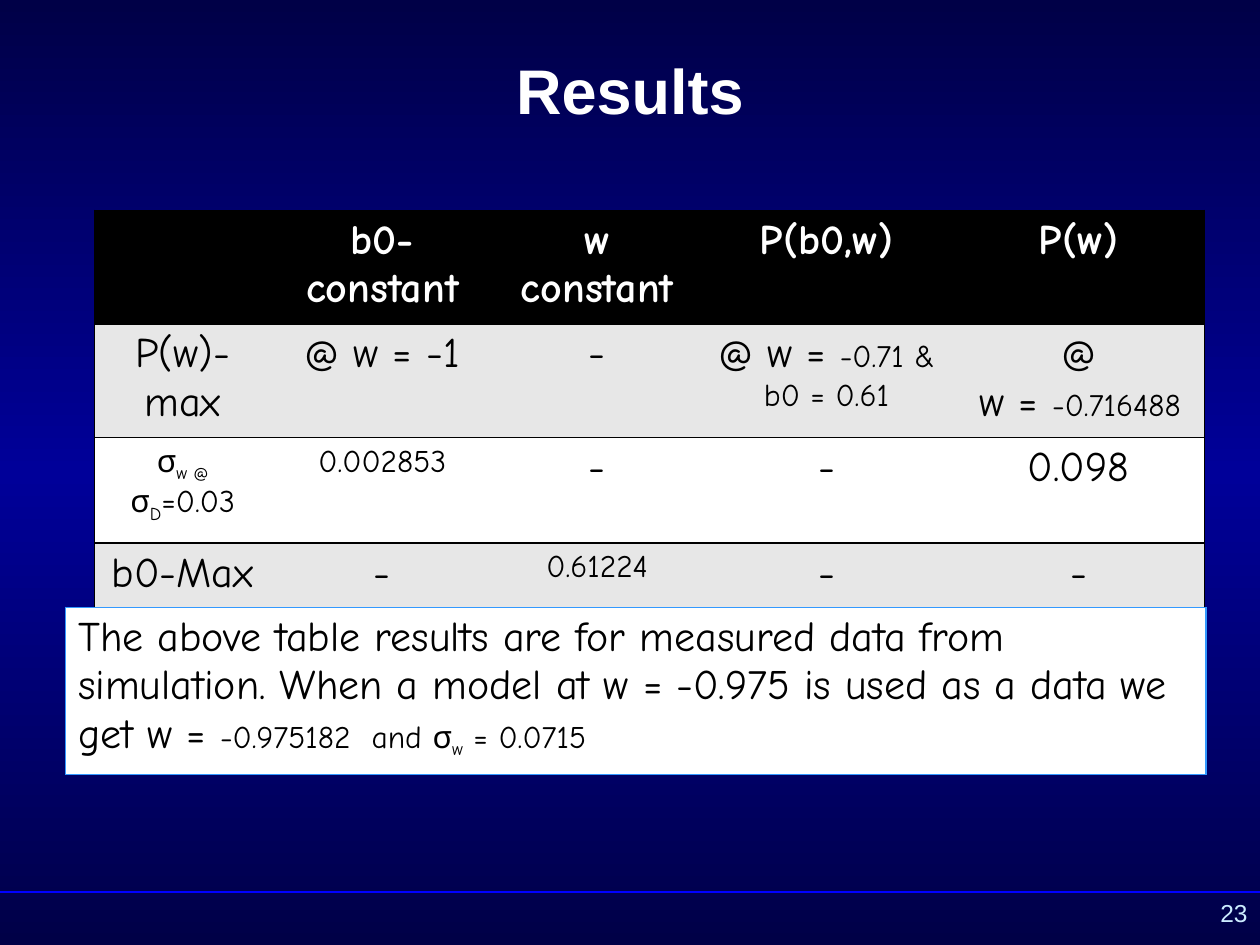
from copy import deepcopy
from typing import NamedTuple

from lxml import etree
from pptx import Presentation
from pptx import util as u
from pptx.dml.color import RGBColor
from pptx.enum import shapes, text
from pptx.oxml.ns import qn

BLACK = RGBColor(0x00, 0x00, 0x00)
WHITE = RGBColor(0xFF, 0xFF, 0xFF)
BAND_GREY = RGBColor(0xE7, 0xE7, 0xE7)
NAVY = RGBColor(0x00, 0x00, 0x47)
MID_BLUE = RGBColor(0x00, 0x00, 0x99)
RULE_BLUE = RGBColor(0x00, 0x00, 0xFF)
NOTE_BLUE = RGBColor(0x33, 0x99, 0xFF)
PALE_BLUE = RGBColor(0xCC, 0xEC, 0xFF)

HAND, SANS = "Comic Neue", "Arial"
WIDTH, HEIGHT = 10, 7.5
FOOTER_TOP = 7.08
LARGE, SMALL = 24, 18


class Run(NamedTuple):
    words: str
    size: int = LARGE
    color: RGBColor = BLACK
    bold: bool = False
    font: str = HAND
    subscript: bool = False


class Box(NamedTuple):
    left: float
    top: float
    width: float
    height: float

    def lengths(self) -> list:
        return [u.Inches(side) for side in self]


Paragraphs = list[list[Run]]


def heading(words: str) -> Paragraphs:
    return [[Run(words, color=WHITE, bold=True)]]


def plain(words: str, size: int = LARGE) -> Paragraphs:
    return [[Run(words, size)]]


def sub(words: str) -> Run:
    return Run(words, SMALL, subscript=True)


DASH = plain("-")
RESULT_ROWS = [
    [[], heading("b0-constant"), heading("w constant"), heading("P(b0,w)"), heading("P(w)")],
    [plain("P(w)- max"), plain("@ w = -1"), DASH,
     [[Run("@ w = "), Run("-0.71 &", SMALL)], [Run("b0 = 0.61", SMALL)]],
     [[Run("@")], [Run(" w = "), Run("-0.716488\u00a0", SMALL)]]],
    [[[Run("σ", SMALL), sub("w @")], [Run("σ", SMALL), sub("D"), Run("=0.03", SMALL)]],
     plain("0.002853", SMALL), DASH, DASH, plain("0.098")],
    [plain("b0-Max"), DASH, plain("0.61224", SMALL), DASH, DASH],
]
ROW_FILLS = [BLACK, BAND_GREY, WHITE, BAND_GREY]
NOTE = [[
    Run("The above table results are for measured data from simulation. "
        "When a model at w = -0.975 is used as a data we get w = "),
    Run("-0.975182\u00a0 and σ", SMALL), sub("w"), Run(" = 0.0715", SMALL),
]]


def write(frame, paragraphs: Paragraphs, align) -> None:
    for index, runs in enumerate(paragraphs):
        paragraph = frame.paragraphs[0] if index == 0 else frame.add_paragraph()
        paragraph.alignment = align
        for part in runs:
            run = paragraph.add_run()
            run.text = part.words
            run.font.size = u.Pt(part.size)
            run.font.name = part.font
            run.font.bold = part.bold
            run.font.color.rgb = part.color
            if part.subscript:
                run.font._element.set("baseline", "-25000")


def set_borders(cell, color: RGBColor, sides: str) -> None:
    """Draw the listed sides (of L, R, T, B) and clear the others."""
    properties = cell._tc.get_or_add_tcPr()
    for side in "LRTB":
        line = etree.SubElement(properties, qn(f"a:ln{side}"), w=str(u.Pt(1)))
        if side in sides:
            solid = etree.SubElement(line, qn("a:solidFill"))
            etree.SubElement(solid, qn("a:srgbClr"), val=str(color))
        else:
            etree.SubElement(line, qn("a:noFill"))


def add_grid(slide, box: Box, columns: list[float], heights: list[float],
             rows: list[list[Paragraphs]], fills: list[RGBColor],
             border: RGBColor, align) -> None:
    """Add a table ruled around its edge and between its rows."""
    table = slide.shapes.add_table(len(rows), len(columns), *box.lengths()).table
    table.first_row = table.horz_banding = False
    for column, width in zip(table.columns, columns):
        column.width = u.Inches(width)
    for r, (row, height) in enumerate(zip(table.rows, heights)):
        row.height = u.Inches(height)
        for c, cell in enumerate(row.cells):
            left = "L" if c == 0 else ""
            right = "R" if c == len(columns) - 1 else ""
            set_borders(cell, border, "TB" + left + right)
            cell.fill.solid()
            cell.fill.fore_color.rgb = fills[r]
            write(cell.text_frame, rows[r][c], align)


def add_label(slide, box: Box, run: Run, align, anchor) -> None:
    frame = slide.shapes.add_textbox(*box.lengths()).text_frame
    frame.word_wrap = True
    frame.vertical_anchor = anchor
    write(frame, [[run]], align)


def paint_background(slide) -> None:
    fill = slide.background.fill
    fill.gradient()
    fill.gradient_angle = 90
    stop_list = slide._element.find(".//" + qn("a:gsLst"))
    stop_list.append(deepcopy(stop_list[-1]))
    for stop, position, color in zip(fill.gradient_stops, (0, 0.5, 1), (NAVY, MID_BLUE, NAVY)):
        stop.position = position
        stop.color.rgb = color


def add_footer_rule(slide) -> None:
    y = u.Inches(FOOTER_TOP)
    rule = slide.shapes.add_connector(shapes.MSO_CONNECTOR.STRAIGHT, 0, y, u.Inches(WIDTH), y)
    rule.line.color.rgb = RULE_BLUE
    rule.line.width = u.Pt(1)
    etree.SubElement(rule._element.spPr, qn("a:effectLst"))


def main() -> None:
    deck = Presentation()
    deck.slide_width, deck.slide_height = u.Inches(WIDTH), u.Inches(HEIGHT)
    slide = deck.slides.add_slide(deck.slide_layouts[6])
    align, anchor = text.PP_ALIGN, text.MSO_ANCHOR

    paint_background(slide)
    add_footer_rule(slide)
    add_label(slide, Box(0.75, 0.25, 8.5, 0.92),
              Run("Results", 36, WHITE, True, SANS), align.CENTER, anchor.MIDDLE)
    add_grid(slide, Box(0.75, 1.67, 8.81, 3.05), [1.4, 1.77, 1.64, 2, 2],
             [0.83, 0.67, 0.84, 0.67], RESULT_ROWS, ROW_FILLS, BLACK, align.CENTER)
    add_label(slide, Box(9.08, FOOTER_TOP, WIDTH - 9.08, HEIGHT - FOOTER_TOP),
              Run("23", 14, PALE_BLUE, font=SANS), align.RIGHT, anchor.TOP)
    add_grid(slide, Box(0.52, 4.82, 9.05, 0.7), [9.05], [0.27],
             [[NOTE]], [WHITE], NOTE_BLUE, align.LEFT)
    deck.save("out.pptx")


if __name__ == "__main__":
    main()
